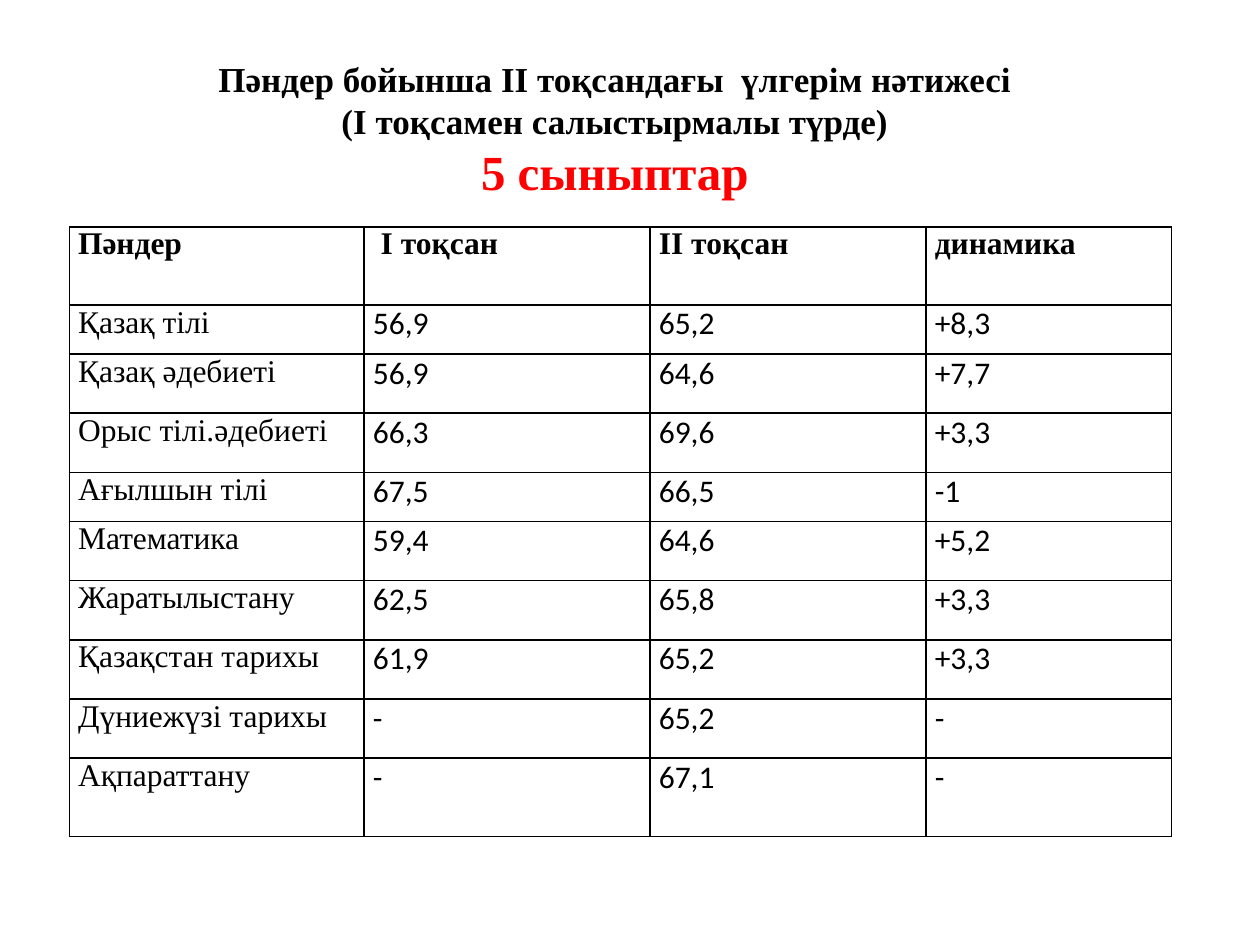
from lxml.etree import SubElement
from pptx import Presentation
from pptx.dml.color import RGBColor
from pptx.enum.text import MSO_ANCHOR, PP_ALIGN
from pptx.oxml.ns import qn
from pptx.util import Inches, Pt

SERIF = "Times New Roman"
SANS = "Calibri"
BLACK = "000000"
RED = "FF0000"

TITLE_LINES = [
    ("Пәндер бойынша II тоқсандағы  үлгерім нәтижесі", 20, BLACK),
    ("(I тоқсамен салыстырмалы түрде)", 20, BLACK),
    ("5 сыныптар", 28, RED),
]
RESULTS = [
    ("Пәндер", " I тоқсан", "II тоқсан", "динамика"),
    ("Қазақ тілі", "56,9", "65,2", "+8,3"),
    ("Қазақ әдебиеті", "56,9", "64,6", "+7,7"),
    ("Орыс тілі.әдебиеті", "66,3", "69,6", "+3,3"),
    ("Ағылшын тілі", "67,5", "66,5", "-1"),
    ("Математика", "59,4", "64,6", "+5,2"),
    ("Жаратылыстану", "62,5", "65,8", "+3,3"),
    ("Қазақстан тарихы", "61,9", "65,2", "+3,3"),
    ("Дүниежүзі тарихы", "-", "65,2", "-"),
    ("Ақпараттану", "-", "67,1", "-"),
]
COLUMN_WIDTHS = [2.34, 2.27, 2.19, 1.95]
ROW_HEIGHTS = [0.62, 0.39, 0.47, 0.47, 0.39, 0.47, 0.47, 0.47, 0.47, 0.62]


def color(value):
    return RGBColor.from_string(value)


class SlideBuilder:
    def __init__(self, slide):
        self.slide = slide
        self.text_color = BLACK
        self.border_color = BLACK
        self.border_width = Pt(1)

    def add_run(self, paragraph, text, size, font=SERIF, bold=False, text_color=None):
        run = paragraph.add_run()
        run.text = text
        run.font.name = font
        run.font.size = Pt(size)
        run.font.bold = bold
        run.font.color.rgb = color(text_color or self.text_color)

    def add_title(self, lines, left, top, width, height):
        frame = self.slide.shapes.add_textbox(
            Inches(left), Inches(top), Inches(width), Inches(height)).text_frame
        frame.word_wrap = True
        frame.vertical_anchor = MSO_ANCHOR.MIDDLE
        frame.margin_bottom = Inches(0.34)
        for index, (text, size, text_color) in enumerate(lines):
            paragraph = frame.add_paragraph() if index else frame.paragraphs[0]
            paragraph.alignment = PP_ALIGN.CENTER
            self.add_run(paragraph, text, size, bold=True, text_color=text_color)

    def add_table(self, rows, left, top, column_widths, row_heights):
        table = self.slide.shapes.add_table(
            len(rows), len(column_widths), Inches(left), Inches(top),
            Inches(sum(column_widths)), Inches(sum(row_heights))).table
        table.first_row = table.horz_banding = False
        for column, width in zip(table.columns, column_widths):
            column.width = Inches(width)
        for row, height in zip(table.rows, row_heights):
            row.height = Inches(height)
        for row_index, row in enumerate(rows):
            for column_index, text in enumerate(row):
                self.fill_cell(table.cell(row_index, column_index), text,
                               is_header=row_index == 0,
                               is_label=row_index == 0 or column_index == 0)

    def fill_cell(self, cell, text, is_header, is_label):
        cell.margin_left = cell.margin_right = Inches(0.07)
        cell.margin_top = cell.margin_bottom = 0
        self.add_borders(cell)
        cell.fill.background()
        paragraph = cell.text_frame.paragraphs[0]
        paragraph.alignment = PP_ALIGN.JUSTIFY if is_label else PP_ALIGN.LEFT
        self.add_run(paragraph, text, 18, SERIF if is_label else SANS, is_header)

    def add_borders(self, cell):
        properties = cell._tc.get_or_add_tcPr()
        for side in ("a:lnL", "a:lnR", "a:lnT", "a:lnB"):
            line = SubElement(properties, qn(side), w=str(self.border_width))
            fill = SubElement(line, qn("a:solidFill"))
            SubElement(fill, qn("a:srgbClr"), val=self.border_color)


def main():
    presentation = Presentation()
    presentation.slide_width = Inches(10)
    presentation.slide_height = Inches(7.5)
    slide = presentation.slides.add_slide(presentation.slide_layouts[6])
    builder = SlideBuilder(slide)
    builder.add_table(RESULTS, 0.55, 1.8, COLUMN_WIDTHS, ROW_HEIGHTS)
    builder.add_title(TITLE_LINES, 0.23, 0.39, 9.3, 1.55)
    presentation.save("out.pptx")


if __name__ == "__main__":
    main()
